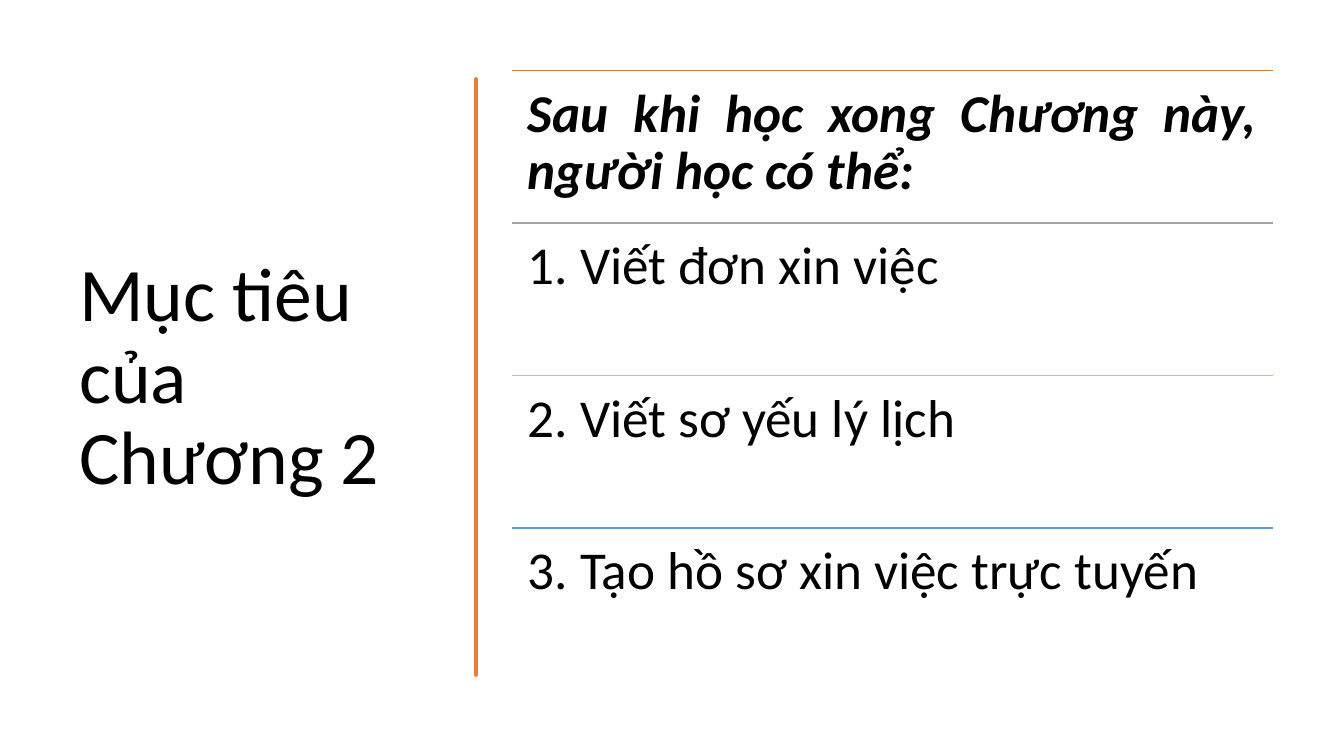
from pptx import Presentation
from pptx.dml.color import RGBColor
from pptx.enum.shapes import MSO_CONNECTOR
from pptx.enum.text import MSO_ANCHOR, PP_ALIGN
from pptx.oxml.ns import qn
from pptx.util import Cm, Pt
from lxml import etree

STRAIGHT = MSO_CONNECTOR.STRAIGHT
TOP, MIDDLE = MSO_ANCHOR.TOP, MSO_ANCHOR.MIDDLE
LEFT, JUSTIFY = PP_ALIGN.LEFT, PP_ALIGN.JUSTIFY

COLORS = {
    "text": "000000",
    "orange": "ED7D31",
    "gray": "A5A5A5",
    "gold": "FFC000",
    "blue": "5B9BD5",
}
FONT = "Calibri"

# Hand-drawn bar, in cm: each curve is (control, control, end)
BAR_RIGHT = [
    ((12.12, 2.59), (12.12, 3.02), (12.06, 3.71)),
    ((12.01, 4.39), (12.09, 4.95), (12.06, 5.74)),
    ((12.04, 6.53), (12.06, 6.65), (12.06, 7.47)),
    ((12.04, 8.26), (12.12, 8.69), (12.06, 9.04)),
    ((12.01, 9.4), (12.17, 10.52), (12.06, 11.07)),
    ((11.96, 11.6), (11.99, 12.29), (12.06, 12.95)),
    ((12.12, 13.61), (12.12, 14.33), (12.06, 14.83)),
    ((12.01, 15.32), (12.09, 16.51), (12.06, 17.17)),
]
BAR_LEFT = [
    ((12.04, 16.41), (11.96, 16.36), (12.01, 15.57)),
    ((12.04, 14.81), (12.04, 14.48), (12.01, 14.15)),
    ((11.99, 13.82), (11.99, 12.57), (12.01, 12.12)),
    ((12.01, 11.66), (11.96, 11.3), (12.01, 10.54)),
    ((12.04, 9.8), (11.99, 9.47), (12.01, 8.51)),
    ((12.04, 7.57), (11.99, 7.14), (12.01, 6.35)),
    ((12.04, 5.54), (12.06, 5.08), (12.01, 4.6)),
    ((11.94, 4.14), (12.11, 2.64), (12.01, 2.13)),
]

# Objectives: text, rule colour, format
OBJECTIVES = [
    ("Sau khi học xong Chương này, người học có thể:", "orange",
     {"bold": True, "italic": True, "align": JUSTIFY}),
    ("1. Viết đơn xin việc", "gray", {}),
    ("2. Viết sơ yếu lý lịch", "gold", {}),
    ("3. Tạo hồ sơ xin việc trực tuyến", "blue", {}),
]
LIST_X, LIST_Y, LIST_W, ROW_H = 12.9, 1.78, 19.18, 3.84


def rgb(name):
    return RGBColor.from_string(COLORS[name])


def write(tf, text, size=38, color="text", bold=False, italic=False, align=LEFT):
    p = tf.paragraphs[0]
    p.alignment = align
    p.line_spacing = 0.9
    r = p.add_run()
    r.text = text
    r.font.name = FONT
    r.font.size = Pt(size)
    r.font.bold = bold
    r.font.italic = italic
    r.font.color.rgb = rgb(color)


def trace(start, curves, steps=8):
    """Points along a chain of cubic curves."""
    points = [start]
    for c1, c2, end in curves:
        first = points[-1]
        for i in range(1, steps + 1):
            t = i / steps
            u = 1 - t
            points.append(tuple(
                u**3 * a + 3 * u * u * t * b + 3 * u * t * t * c + t**3 * d
                for a, b, c, d in zip(first, c1, c2, end)))
    return points


class SlideBuilder:
    def __init__(self, prs):
        self.s = prs.slides.add_slide(prs.slide_layouts[6])

    def text(self, x, y, w, h, text, inset=0.4, anchor=TOP, **fmt):
        sp = self.s.shapes.add_textbox(Cm(x), Cm(y), Cm(w), Cm(h))
        tf = sp.text_frame
        tf.word_wrap = True
        tf.vertical_anchor = anchor
        tf.margin_left = tf.margin_right = Cm(inset)
        tf.margin_top = tf.margin_bottom = Cm(inset)
        write(tf, text, **fmt)

    def rule(self, x, y, w, color):
        sp = self.s.shapes.add_connector(STRAIGHT, Cm(x), Cm(y), Cm(x + w), Cm(y))
        sp.line.color.rgb = rgb(color)
        sp.line.width = Pt(1)
        etree.SubElement(sp._element.spPr, qn("a:effectLst"))

    def outline(self, points, color, width):
        fb = self.s.shapes.build_freeform(*points[0], scale=Cm(1))
        fb.add_line_segments(points[1:], close=True)
        sp = fb.convert_to_shape()
        sp.shadow.inherit = False
        sp.fill.solid()
        sp.fill.fore_color.rgb = rgb(color)
        sp.line.color.rgb = rgb(color)
        sp.line.width = Pt(width)


def main():
    prs = Presentation()
    prs.slide_width, prs.slide_height = Cm(33.87), Cm(19.05)
    slide = SlideBuilder(prs)

    # Title
    slide.text(1.75, 1.78, 9.5, 15.52, "Mục tiêu của Chương 2",
               inset=0.25, anchor=MIDDLE, size=54)

    # Divider bar
    bar = trace((12.06, 2.13), BAR_RIGHT) + trace((12.01, 17.17), BAR_LEFT)
    slide.outline(bar, "orange", 3.25)

    # Objectives under their rules
    for i, (text, color, fmt) in enumerate(OBJECTIVES):
        y = LIST_Y + i * ROW_H
        slide.rule(LIST_X, y, LIST_W, color)
        slide.text(LIST_X, y, LIST_W, ROW_H, text, **fmt)

    prs.save("out.pptx")


if __name__ == "__main__":
    main()
